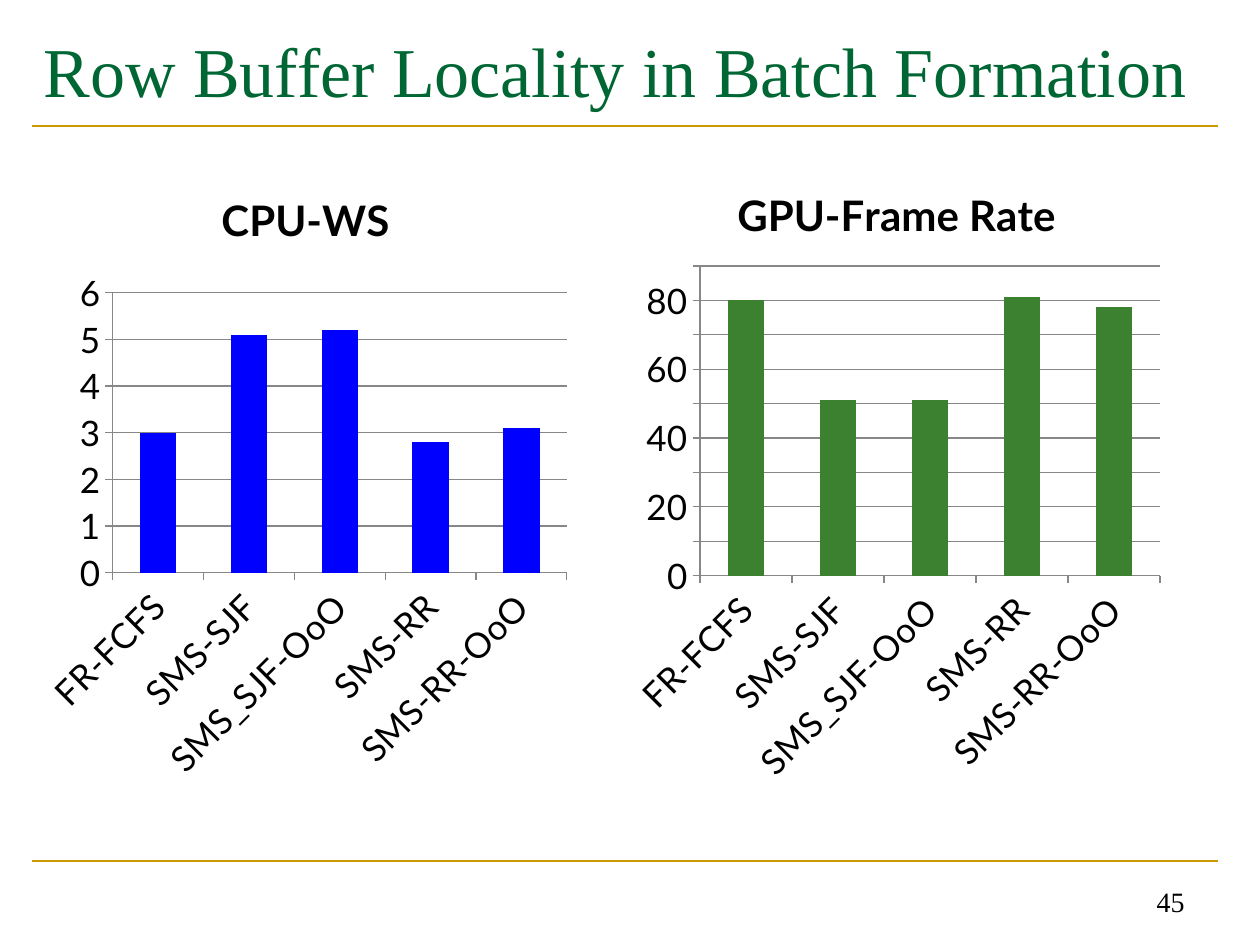
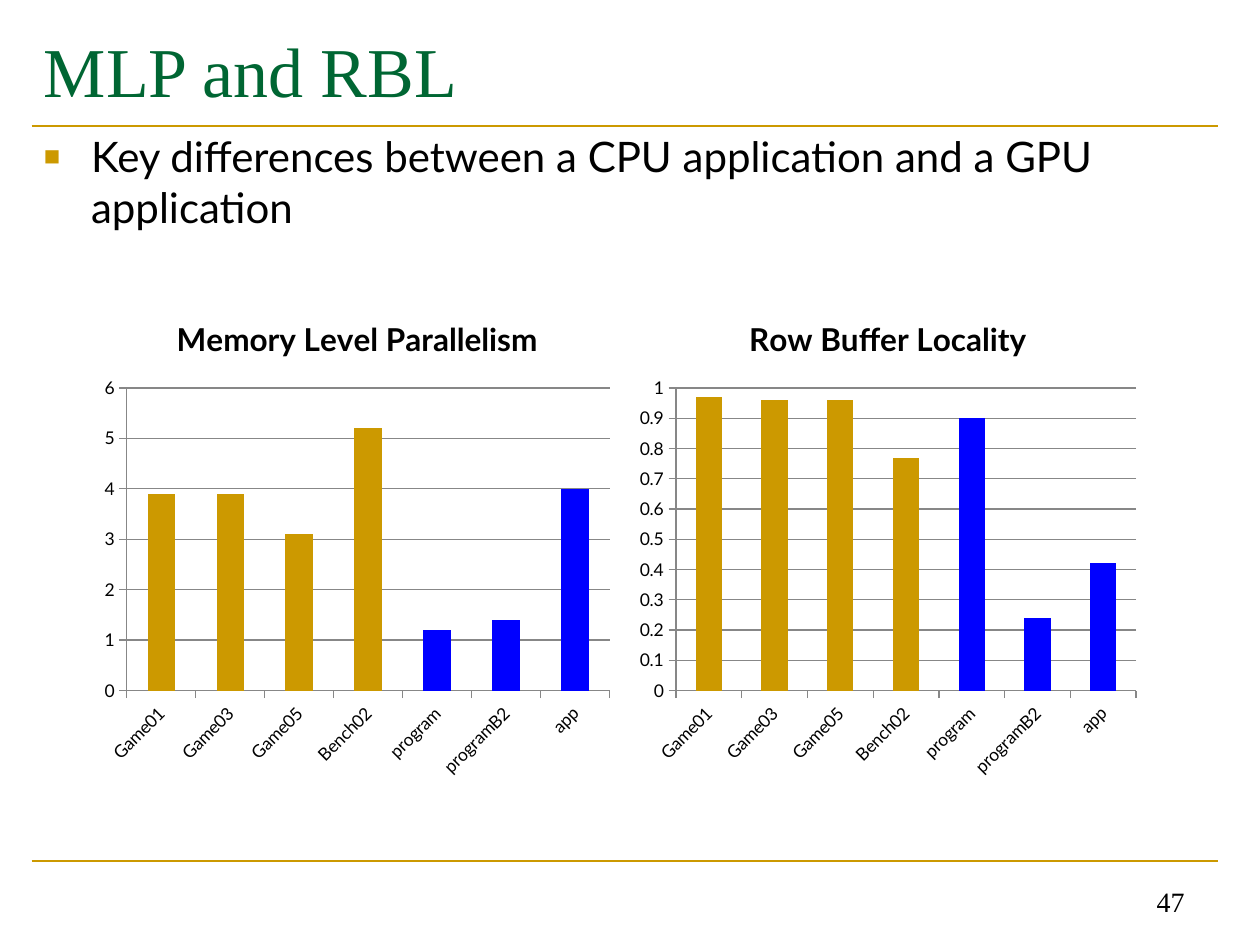
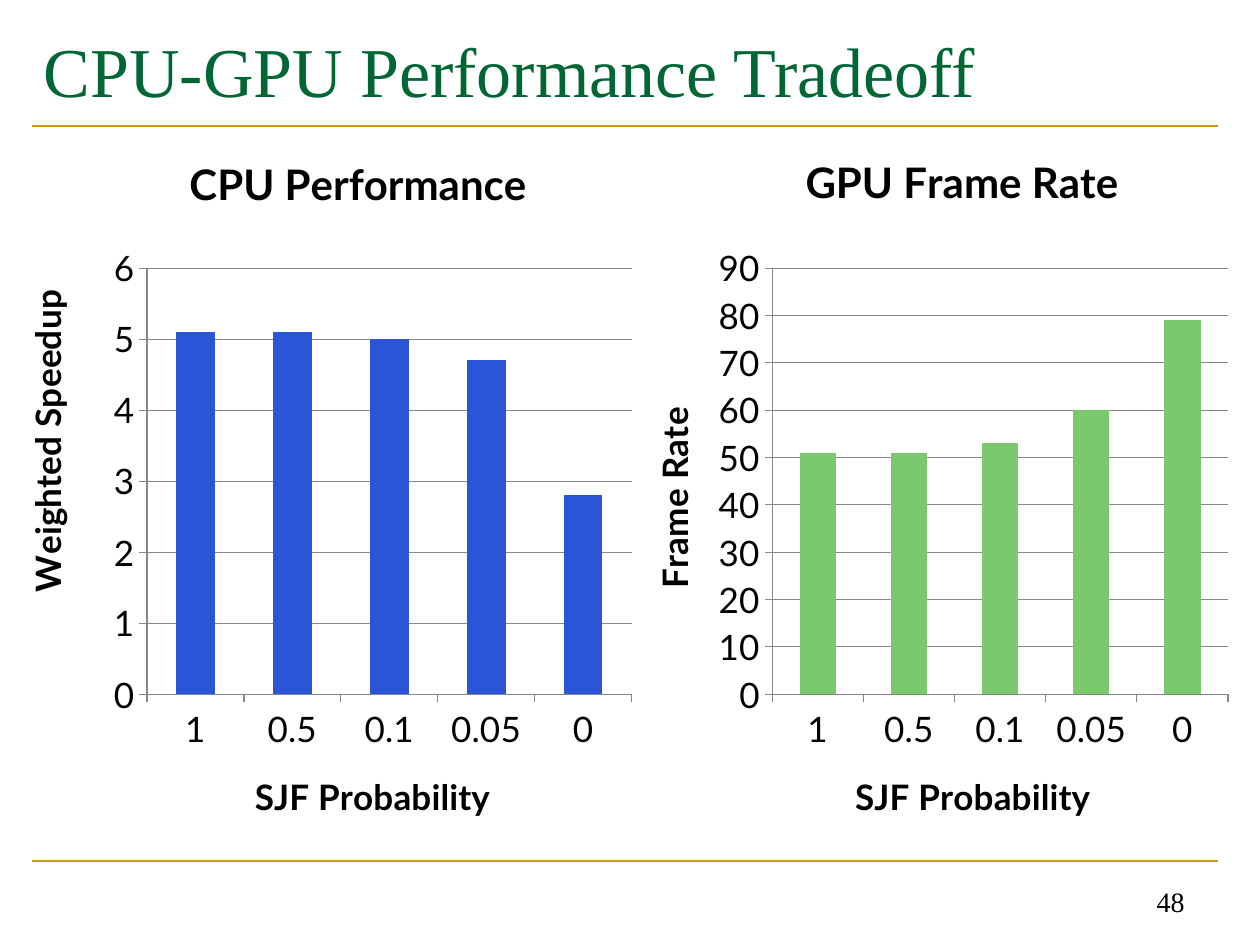
"""Build three slides that compare CPU and GPU scheduling results in column charts."""
import lxml.etree
import pptx
import pptx.chart.data
import pptx.dml.color
import pptx.enum.chart
import pptx.enum.shapes
import pptx.enum.text
import pptx.oxml.ns
import pptx.util

Pt = pptx.util.Pt
qn = pptx.oxml.ns.qn
ANCHOR = pptx.enum.text.MSO_ANCHOR
ALIGN = pptx.enum.text.PP_ALIGN

GREEN, GOLD, BLACK, GREY = "006633", "CC9900", "000000", "878787"
BLUE, LEAF, ROYAL, LIME = "0000FF", "3B812F", "2A55D6", "7AC96C"
SERIF, SANS = "Times New Roman", "Lato"


def color(value):
    """Turn a hex string into a colour."""
    return pptx.dml.color.RGBColor.from_string(value)


def set_layout(element, index, frame, left, top, size=None):
    """Place a chart part, given in slide points, inside the chart frame."""
    for old in element.findall(qn("c:layout")):
        element.remove(old)
    layout = lxml.etree.Element(qn("c:layout"))
    manual = lxml.etree.SubElement(layout, qn("c:manualLayout"))
    settings = {"xMode": "edge", "yMode": "edge",
                "x": (left - frame[0]) / frame[2], "y": (top - frame[1]) / frame[3]}
    if size:
        settings = {"layoutTarget": "inner", **settings,
                    "w": size[0] / frame[2], "h": size[1] / frame[3]}
    for name, value in settings.items():
        text = value if isinstance(value, str) else f"{value:.4f}"
        lxml.etree.SubElement(manual, qn(f"c:{name}")).set("val", text)
    element.insert(index, layout)


class Builder:
    """Holds the deck, its style and the current page."""

    def __init__(self):
        self.deck = pptx.Presentation()
        self.deck.slide_width, self.deck.slide_height = Pt(720), Pt(540)
        self.page = None

    def new_page(self, title, number):
        """Start a page with rules, title and page number."""
        self.page = self.deck.slides.add_slide(self.deck.slide_layouts[6])
        for height in (492, 72):
            self.rule(height)
        self.text(title, (18, 9.7, 678, 60), 40, SERIF, GREEN, anchor=ANCHOR.MIDDLE)
        self.text(str(number), (516, 492, 168, 36), 16, SERIF,
                  anchor=ANCHOR.BOTTOM, align=ALIGN.RIGHT)

    def rule(self, height):
        """Draw a horizontal gold rule across the page."""
        line = self.page.shapes.add_connector(
            pptx.enum.shapes.MSO_CONNECTOR.STRAIGHT, Pt(18), Pt(height), Pt(696), Pt(height))
        line.line.color.rgb = color(GOLD)
        line.line.width = Pt(1.5)
        lxml.etree.SubElement(line._element.spPr, qn("a:effectLst"))

    def text(self, words, frame, size, font, ink=BLACK, anchor=ANCHOR.TOP, align=ALIGN.LEFT):
        """Add a one-paragraph text box and return the paragraph."""
        box = self.page.shapes.add_textbox(*map(Pt, frame))
        box.text_frame.word_wrap = True
        box.text_frame.vertical_anchor = anchor
        para = box.text_frame.paragraphs[0]
        para.alignment = align
        self.span(para, words, size, font, ink)
        return para

    def span(self, para, words, size, font, ink=BLACK, bold=False):
        """Add one styled run to a paragraph."""
        span = para.add_run()
        span.text = words
        span.font.size, span.font.name, span.font.bold = Pt(size), font, bold
        span.font.color.rgb = color(ink)

    def bullet(self, words, frame):
        """Add a text box with a square gold bullet."""
        para = self.text(words, frame, 24, SANS)
        para.space_before = Pt(4.8)
        props = para._p.get_or_add_pPr()
        props.set("marL", str(Pt(27)))
        props.set("indent", str(-Pt(27)))
        bullet_color = lxml.etree.SubElement(props, qn("a:buClr"))
        lxml.etree.SubElement(bullet_color, qn("a:srgbClr")).set("val", GOLD)
        lxml.etree.SubElement(props, qn("a:buSzPct")).set("val", "65000")
        lxml.etree.SubElement(props, qn("a:buFont")).set("typeface", "Arial")
        lxml.etree.SubElement(props, qn("a:buChar")).set("char", "■")

    def chart_title(self, owner, words, size, frame, place=None):
        """Write the title of a chart or an axis, placed when a point is given."""
        owner.has_title = True
        title = owner.chart_title if hasattr(owner, "chart_title") else owner.axis_title
        self.span(title.text_frame.paragraphs[0], words, size, SANS, bold=True)
        if place:
            set_layout(title._element, 1, frame, *place)

    def columns(self, title, cats, values, fill, frame, plot, top, step, title_size=24,
                label_size=20, title_at=None, axis_titles=(), slanted=False,
                name=None, accents=()):
        """Add a column chart with one series."""
        data = pptx.chart.data.CategoryChartData()
        data.categories = cats
        data.add_series(name or title, values)
        chart = self.page.shapes.add_chart(
            pptx.enum.chart.XL_CHART_TYPE.COLUMN_CLUSTERED, *map(Pt, frame), data).chart
        chart.has_legend = False
        chart.font.size, chart.font.name = Pt(10), SANS
        chart.font.color.rgb = color(BLACK)
        self.chart_title(chart, title, title_size, frame, title_at)
        set_layout(chart._chartSpace.chart.plotArea, 0, frame, *plot[:2], size=plot[2:])

        bars = chart.plots[0]
        bars.gap_width = 150
        bars.vary_by_categories = False
        series = bars.series[0]
        series.invert_if_negative = False
        self.fill(series, fill)
        for index in accents:
            self.fill(series.points[index], BLUE)

        axes = (chart.category_axis, chart.value_axis)
        for axis in axes:
            axis.major_tick_mark = pptx.enum.chart.XL_TICK_MARK.OUTSIDE
            axis.tick_labels.font.size = Pt(label_size)
            self.hairline(axis.format.line)
        for axis, (words, place) in zip(axes, axis_titles):
            self.chart_title(axis, words, 20, frame, place)
        if slanted:
            axes[0]._element.find(qn("c:txPr")).find(qn("a:bodyPr")).set("rot", "-2700000")
        axes[1].minimum_scale, axes[1].maximum_scale, axes[1].major_unit = 0, top, step
        axes[1].has_major_gridlines = True
        self.hairline(axes[1].major_gridlines.format.line)

    def fill(self, target, value):
        """Fill a series or a point with a solid colour."""
        target.format.fill.solid()
        target.format.fill.fore_color.rgb = color(value)

    def hairline(self, line):
        """Style an axis or grid line."""
        line.color.rgb = color(GREY)
        line.width = Pt(0.75)


def main():
    """Build the three pages and save the deck."""
    builder = Builder()

    builder.new_page("Row Buffer Locality in Batch Formation", 45)
    schedulers = ["FR-FCFS", "SMS-SJF", "SMS_SJF-OoO", "SMS-RR", "SMS-RR-OoO"]
    builder.columns("CPU-WS", schedulers, [3, 5.1, 5.2, 2.8, 3.1], BLUE,
                    (19.4, 92.9, 310.3, 360), (64.5, 167.4, 259.5, 160), 6, 1, slanted=True)
    builder.columns("GPU-Frame Rate", schedulers, [80, 51, 51, 81, 78], LEAF,
                    (355.7, 90, 313.2, 364.3), (400, 152, 263, 177), 90, 10, slanted=True)

    builder.new_page("MLP and RBL", 47)
    builder.bullet("Key differences between a CPU application and a GPU application",
                   (18, 71.3, 678, 420.5))
    programs = ["Game01", "Game03", "Game05", "Bench02", "program", "programB2", "app"]
    small = dict(title_size=18, label_size=10, slanted=True, accents=(4, 5, 6))
    builder.columns("Memory Level Parallelism", programs, [3.9, 3.9, 3.1, 5.2, 1.2, 1.4, 4],
                    GOLD, (54, 167.8, 300.2, 283.7), (72.5, 221.7, 276, 173), 6, 1,
                    name="Series 1", **small)
    builder.columns("Row Buffer Locality", programs,
                    [0.97, 0.96, 0.96, 0.77, 0.9, 0.24, 0.42],
                    GOLD, (360, 167.8, 294.5, 283.7), (386.3, 221.7, 263, 173), 1, 0.1, **small)

    builder.new_page("CPU-GPU Performance Tradeoff", 48)
    odds = ["1", "0.5", "0.1", "0.05", "0"]
    builder.columns("CPU Performance", odds, [5.1, 5.1, 5, 4.7, 2.8], ROYAL,
                    (8.6, 77, 360, 408.2), (84, 153.3, 277, 243.5), 6, 1, title_at=(104, 83.5),
                    axis_titles=[("SJF Probability", (142, 437)),
                                 ("Weighted Speedup", (8.6, 162))])
    builder.columns("GPU Frame Rate", odds, [51, 51, 53, 60, 79], LIME,
                    (354.2, 77, 354.2, 408.2), (441.3, 153.3, 260.5, 243.5), 90, 10,
                    title_at=(456, 82),
                    axis_titles=[("SJF Probability", (485, 437)),
                                 ("Frame Rate", (367, 229))])

    builder.deck.save("out.pptx")


if __name__ == "__main__":
    main()
